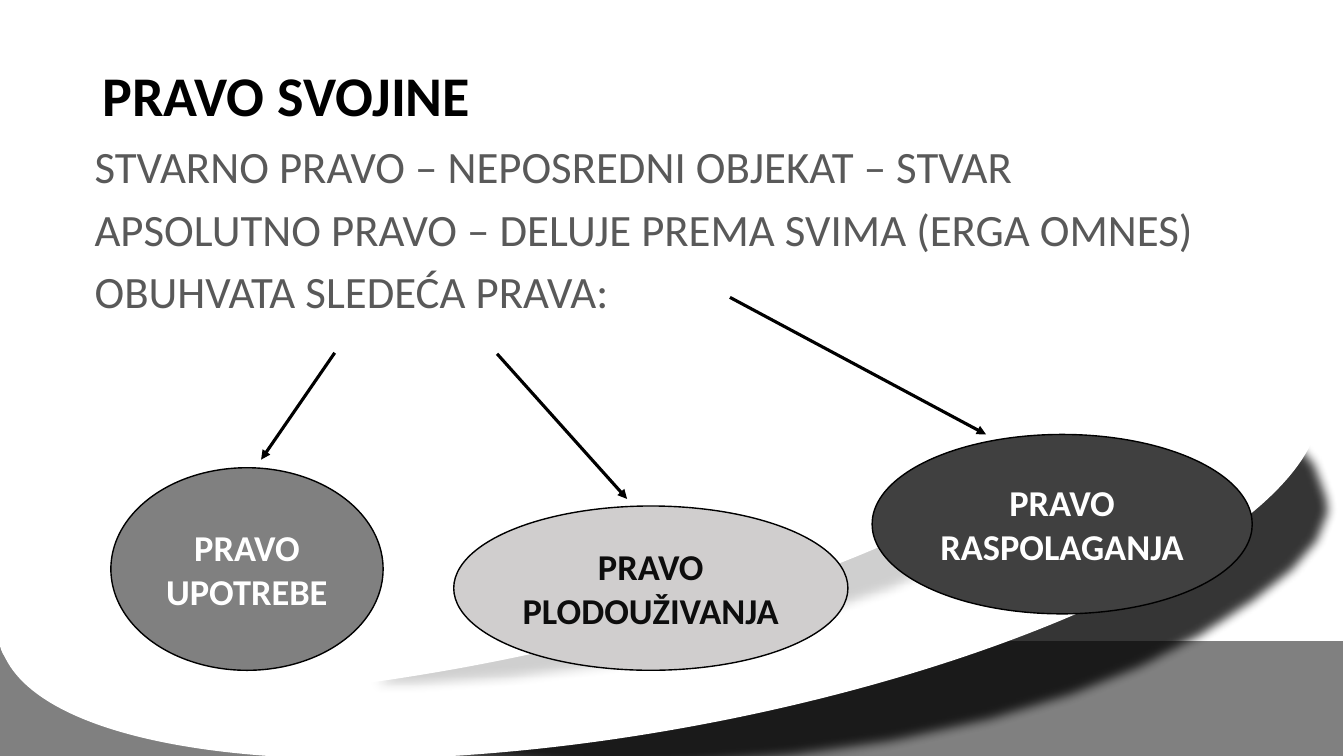
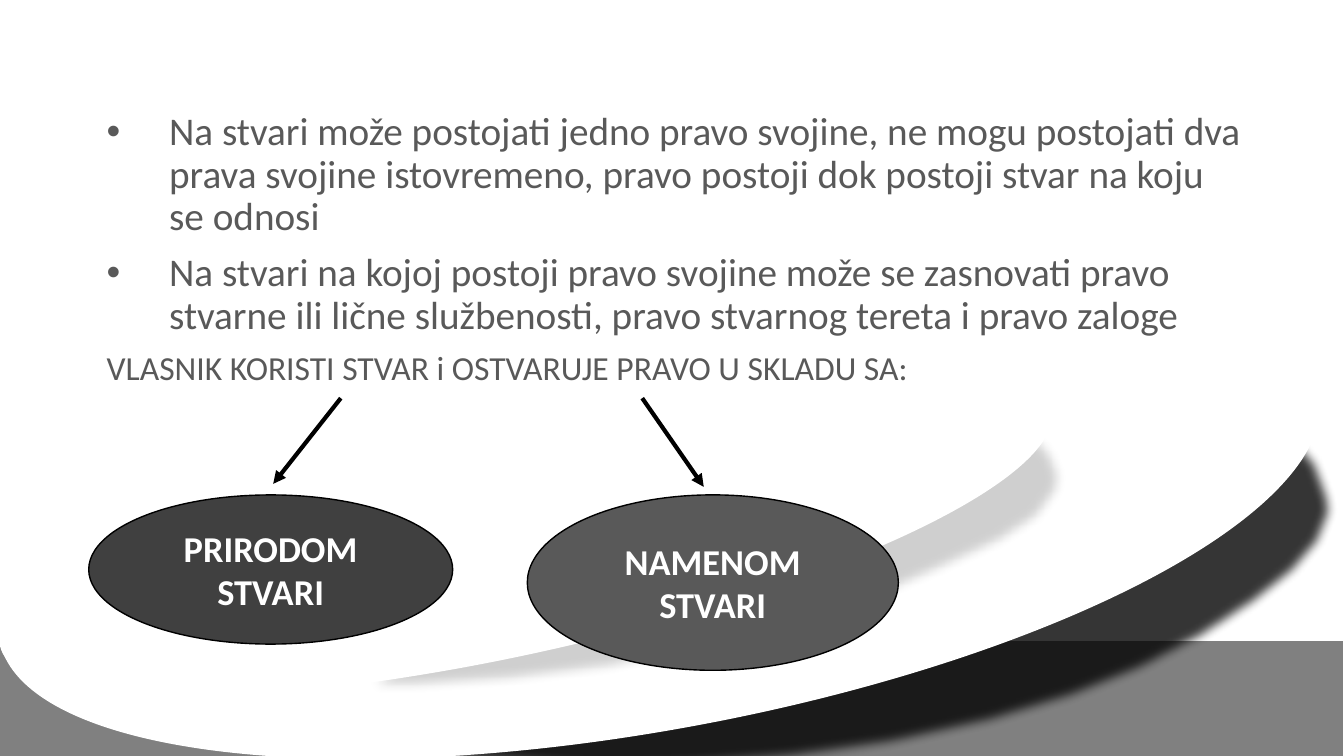
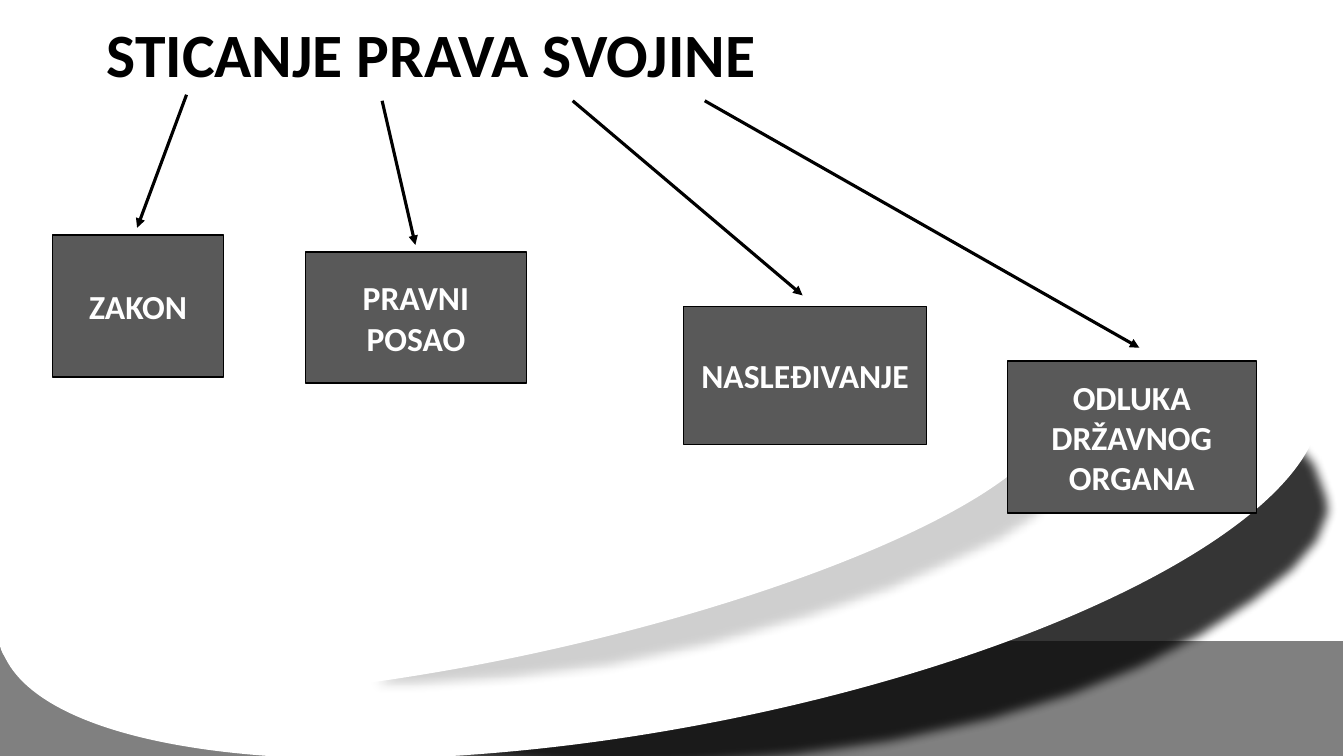
from lxml.etree import SubElement as Sub
from pptx import Presentation
from pptx.dml.color import RGBColor as Rgb
from pptx.enum.shapes import MSO_CONNECTOR as Conn, MSO_SHAPE as Kind
from pptx.enum.text import MSO_ANCHOR as Anchor, PP_ALIGN as Align
from pptx.oxml.ns import qn
from pptx.util import Pt

PX = 9144
FONT = "Calibri"
HEX = {
    "white": "FFFFFF", "black": "000000", "ink": "0D0D0D", "text": "595959",
    "dark": "404040", "mid": "808080", "pale": "D0CECE",
}
PAGE = (0, 0, 1333, 750)
OUTER = [
    (1290, 427), (1312, 451), (1325, 486), (1327, 516), (1315, 546), (1290, 575),
    (1252, 605), (1200, 639), (1141, 670), (1071, 698), (992, 722), (893, 744),
    (794, 758), (694, 766), (595, 770), (417, 756), (595, 645), (992, 516),
]
INNER = [
    (1032, 422), (1050, 441), (1060, 466), (1056, 496), (1037, 521), (1002, 544),
    (952, 567), (893, 593), (813, 620), (714, 648), (615, 669), (516, 681),
    (427, 687), (327, 688), (417, 635), (794, 496),
]


def emu(*nums):
    """Turn px into EMU."""
    return [n * PX for n in nums]


def color(name):
    """Look up a colour by name."""
    return Rgb.from_string(HEX[name])


def paint(shape, fill, line=None):
    """Give a shape a flat fill and, if named, a thin line."""
    shape.shadow.inherit = False
    shape.fill.solid()
    shape.fill.fore_color.rgb = color(fill)
    if line:
        shape.line.color.rgb = color(line)
        shape.line.width = Pt(1)
    else:
        shape.line.fill.background()
    return shape


def style(para, size, tint, bold=False):
    """Set the font of a paragraph."""
    font = para.font
    font.name, font.size, font.bold = FONT, Pt(size), bold
    font.color.rgb = color(tint)


def shade(slide, box, dots, alpha):
    """Draw a soft see-through shade."""
    x, y = box[:2]
    dots = [(x + a, y + b) for a, b in dots]
    pen = slide.shapes.build_freeform(*dots[0], scale=PX)
    pen.add_line_segments(dots[1:], close=True)
    blob = paint(pen.convert_to_shape(), "black")
    props = blob._element.spPr
    tone = props.find(qn("a:solidFill"))[0]
    Sub(tone, qn("a:alpha"), val=str(alpha * 1000))
    Sub(props.find(qn("a:effectLst")), qn("a:softEdge"), rad=str(Pt(8)))


def swoosh(slide, box):
    """Draw the grey band and the two shaded white curves."""
    x, y = box[:2]
    band = slide.shapes.add_shape(Kind.RECTANGLE, *emu(x - 1, y + 636, 1333, 121))
    paint(band, "mid")
    curves = [
        (-12, 302, 1332, 421, -10.6, OUTER, 79),
        (-13, 400, 1069, 247, -12.7, INNER, 19),
    ]
    for left, top, wide, high, turn, dots, alpha in curves:
        shade(slide, box, dots, alpha)
        oval = slide.shapes.add_shape(Kind.OVAL, *emu(x + left, y + top, wide, high))
        paint(oval, "white").rotation = turn


def prose(slide, box, items, tint="text", bold=False, anchor=Anchor.TOP):
    """Fill a text box with (text, size, bullet) paragraphs."""
    frame = slide.shapes.add_textbox(*emu(*box)).text_frame
    frame.word_wrap, frame.vertical_anchor = True, anchor
    for i, (text, size, dot) in enumerate(items):
        para = frame.add_paragraph() if i else frame.paragraphs[0]
        para.text, para.line_spacing = text, 0.9
        if i:
            para.space_before = Pt(10)
        if dot:
            props = para._p.get_or_add_pPr()
            props.set("marL", str(62 * PX))
            props.set("indent", str(-62 * PX))
            Sub(props, qn("a:buFont"), typeface="Arial")
            Sub(props, qn("a:buChar"), char="•")
        style(para, size, tint, bold)


def node(slide, kind, box, text, fill, size, tint="white"):
    """Draw a labelled shape."""
    shape = paint(slide.shapes.add_shape(kind, *emu(*box)), fill, "black")
    frame = shape.text_frame
    frame.word_wrap, frame.vertical_anchor = True, Anchor.MIDDLE
    para = frame.paragraphs[0]
    para.text, para.alignment = text, Align.CENTER
    style(para, size, tint, True)


def arrow(slide, ends, width):
    """Draw an arrow along (x1, y1, x2, y2)."""
    link = slide.shapes.add_connector(Conn.STRAIGHT, *emu(*ends))
    link.line.color.rgb = color("black")
    link.line.width = Pt(width)
    Sub(link.line._get_or_add_ln(), qn("a:tailEnd"), type="triangle")
    Sub(link._element.spPr, qn("a:effectLst"))


def tree(slide, box, kind, size, width, parts):
    """Draw the arrows and nodes of a diagram within a box."""
    x, y = box[:2]
    for (x1, y1, x2, y2), *_ in parts:
        arrow(slide, (x + x1, y + y1, x + x2, y + y2), width)
    for _, (left, top, wide, high), *look in parts:
        text, fill, tint = look
        node(slide, kind, (x + left, y + top, wide, high), text, fill, size, tint)


def rights(slide, box):
    """Build the slide on the right of ownership."""
    x, y = box[:2]
    prose(slide, (x + 92, y + 61, 1150, 73), [("PRAVO SVOJINE", 40, False)],
          "black", True, Anchor.MIDDLE)
    lines = [
        "STVARNO PRAVO – NEPOSREDNI OBJEKAT – STVAR",
        "APSOLUTNO PRAVO – DELUJE PREMA SVIMA (ERGA OMNES)",
        "OBUHVATA SLEDEĆA PRAVA:",
    ]
    prose(slide, (x + 84, y + 139, 1150, 506), [(t, 32, False) for t in lines])
    tree(slide, box, Kind.OVAL, 26, 2.25, [
        ((332, 350, 259, 456), (110, 464, 270, 201), "PRAVO UPOTREBE", "mid", "white"),
        ((493, 351, 622, 495), (450, 502, 391, 163), "PRAVO PLODOUŽIVANJA", "pale", "ink"),
        ((724, 295, 978, 431), (865, 431, 377, 178), "PRAVO RASPOLAGANJA", "dark", "white"),
    ])


def usage(slide, box):
    """Build the slide on how the owner uses a thing."""
    x, y = box[:2]
    prose(slide, (x + 96, y + 106, 1150, 559), [
        ("Na stvari može postojati jedno pravo svojine, ne mogu postojati dva prava "
         "svojine istovremeno, pravo postoji dok postoji stvar na koju se odnosi", 28, True),
        ("Na stvari na kojoj postoji pravo svojine može se zasnovati pravo stvarne ili "
         "lične službenosti, pravo stvarnog tereta i pravo zaloge", 28, True),
        ("VLASNIK KORISTI STVAR i OSTVARUJE PRAVO U SKLADU SA:", 24, False),
    ])
    tree(slide, box, Kind.OVAL, 26, 3, [
        ((338, 395, 271, 480), (88, 491, 361, 148), "PRIRODOM STVARI", "dark", "white"),
        ((637, 395, 698, 483), (523, 491, 368, 174), "NAMENOM STVARI", "text", "white"),
    ])


def gain(slide, box):
    """Build the slide on gaining ownership."""
    x, y = box[:2]
    prose(slide, (x + 96, y + 19, 1150, 646), [("STICANJE PRAVA SVOJINE", 44, False)],
          "black", True)
    tree(slide, box, Kind.RECTANGLE, 24, 2.25, [
        ((185, 94, 136, 226), (52, 233, 170, 141), "ZAKON", "text", "white"),
        ((379, 100, 412, 243), (303, 250, 219, 130), "PRAVNI POSAO", "text", "white"),
        ((568, 100, 796, 293), (678, 304, 241, 137), "NASLEĐIVANJE", "text", "white"),
        ((699, 100, 1130, 345), (999, 358, 247, 151), "ODLUKA DRŽAVNOG ORGANA", "text", "white"),
    ])


def main():
    """Build and save the deck."""
    deck = Presentation()
    deck.slide_width, deck.slide_height = emu(*PAGE[2:])
    for build in (rights, usage, gain):
        slide = deck.slides.add_slide(deck.slide_layouts[6])
        swoosh(slide, PAGE)
        build(slide, PAGE)
    deck.save("out.pptx")


if __name__ == "__main__":
    main()
